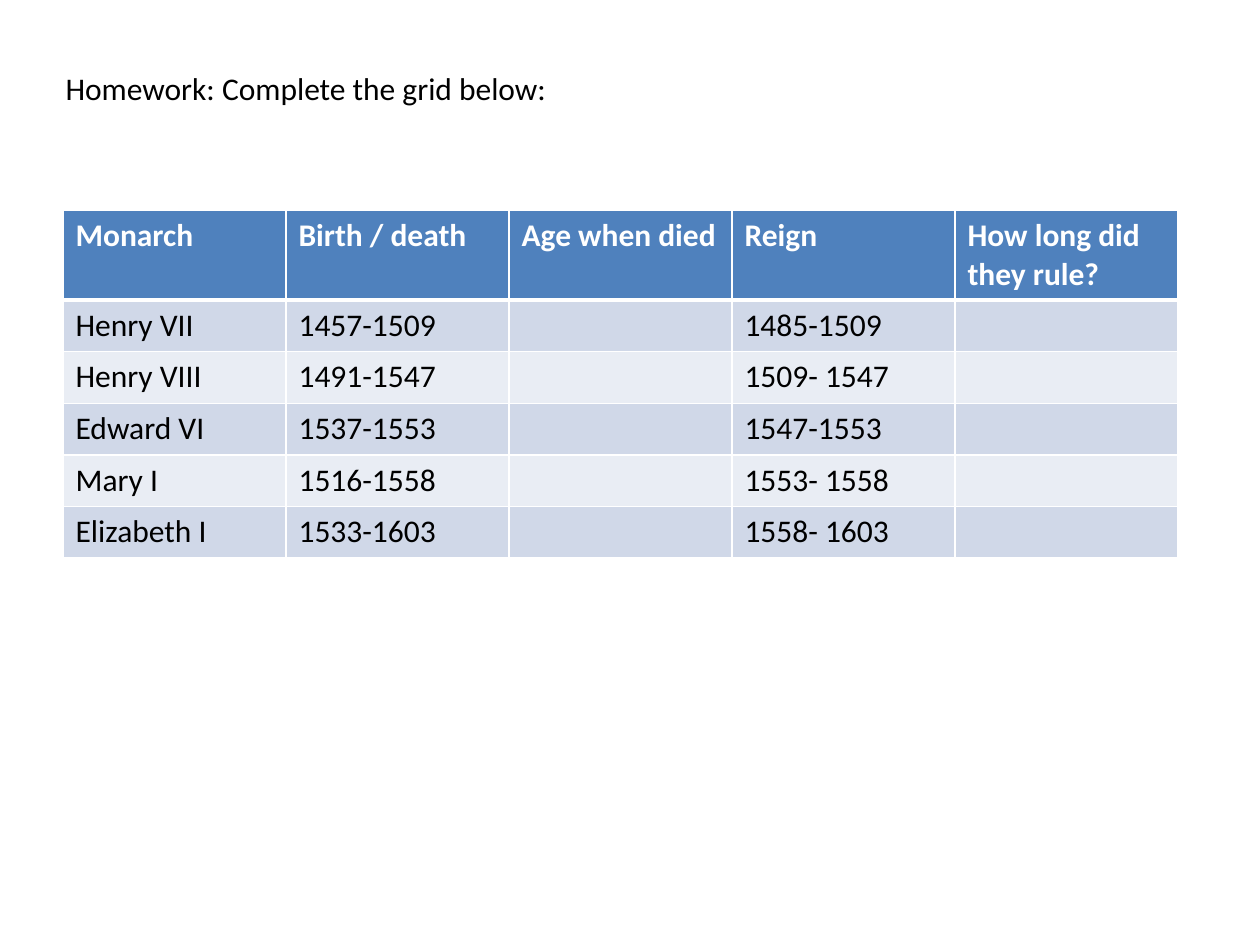
from dataclasses import dataclass

from lxml.etree import SubElement
from pptx import Presentation
from pptx.dml.color import RGBColor
from pptx.enum.text import MSO_ANCHOR, PP_ALIGN
from pptx.oxml.ns import qn
from pptx.slide import Slide
from pptx.table import _Cell as Cell
from pptx.text.text import TextFrame
from pptx.util import Inches, Pt


@dataclass(frozen=True)
class Theme:
    font: str = "Calibri"
    size: int = 18
    ink: str = "000000"
    paper: str = "FFFFFF"
    header: str = "4F81BD"
    bands: tuple[str, str] = ("D0D8E8", "E9EDF4")
    rule: int = 1
    header_rule: int = 3


@dataclass(frozen=True)
class Monarch:
    name: str
    lifespan: str
    reign: str

    def entries(self) -> tuple[str, ...]:
        return self.name, self.lifespan, "", self.reign, ""


@dataclass(frozen=True)
class Grid:
    left: float
    top: float
    column: float
    row: float


THEME = Theme()
GRID = Grid(left=0.5, top=1.67, column=1.77, row=0.41)
HEADINGS = ("Monarch", "Birth / death", "Age when died", "Reign", "How long did they rule?")
MONARCHS = (
    Monarch("Henry VII", "1457-1509", "1485-1509"),
    Monarch("Henry VIII", "1491-1547", "1509- 1547"),
    Monarch("Edward VI", "1537-1553", "1547-1553"),
    Monarch("Mary I", "1516-1558", "1553- 1558"),
    Monarch("Elizabeth I", "1533-1603", "1558- 1603"),
)


def write(frame: TextFrame, wording: str, color: str, bold: bool = False) -> None:
    frame.text = wording
    paragraph = frame.paragraphs[0]
    paragraph.alignment = PP_ALIGN.LEFT
    for font in (paragraph.font, *(run.font for run in paragraph.runs)):
        font.name = THEME.font
        font.size = Pt(THEME.size)
        font.bold = bold
        font.color.rgb = RGBColor.from_string(color)


def add_borders(cell: Cell, top: int, bottom: int) -> None:
    properties = cell._tc.get_or_add_tcPr()
    widths = {"a:lnL": THEME.rule, "a:lnR": THEME.rule, "a:lnT": top, "a:lnB": bottom}
    for position, (side, width) in enumerate(widths.items()):
        line = SubElement(properties, qn(side), w=str(Pt(width)))
        SubElement(SubElement(line, qn("a:solidFill")), qn("a:srgbClr"), val=THEME.paper)
        properties.insert(position, line)


def add_instruction(slide: Slide, wording: str) -> None:
    instruction = slide.shapes.title
    instruction.left, instruction.top = Inches(0.42), Inches(0.5)
    instruction.width, instruction.height = Inches(4.07), Inches(0.4)
    write(instruction.text_frame, wording, THEME.ink)
    instruction.text_frame.word_wrap = False
    instruction.text_frame.vertical_anchor = MSO_ANCHOR.TOP


def add_homework_grid(slide: Slide) -> None:
    lines = (HEADINGS, *(monarch.entries() for monarch in MONARCHS))
    homework = slide.shapes.add_table(
        len(lines), len(HEADINGS), Inches(GRID.left), Inches(GRID.top),
        Inches(GRID.column * len(HEADINGS)), Inches(GRID.row * len(lines)),
    ).table
    for row, entries in enumerate(lines):
        is_header = row == 0
        fill = THEME.header if is_header else THEME.bands[(row - 1) % 2]
        top = THEME.header_rule if row == 1 else THEME.rule
        bottom = THEME.header_rule if is_header else THEME.rule
        for column, entry in enumerate(entries):
            cell = homework.cell(row, column)
            write(cell.text_frame, entry, THEME.paper if is_header else THEME.ink, is_header)
            cell.fill.solid()
            cell.fill.fore_color.rgb = RGBColor.from_string(fill)
            add_borders(cell, top, bottom)


def main() -> None:
    deck = Presentation()
    deck.slide_width, deck.slide_height = Inches(10), Inches(7.5)
    slide = deck.slides.add_slide(deck.slide_layouts.get_by_name("Title Only"))
    add_instruction(slide, "Homework: Complete the grid below:")
    add_homework_grid(slide)
    deck.save("out.pptx")


if __name__ == "__main__":
    main()
